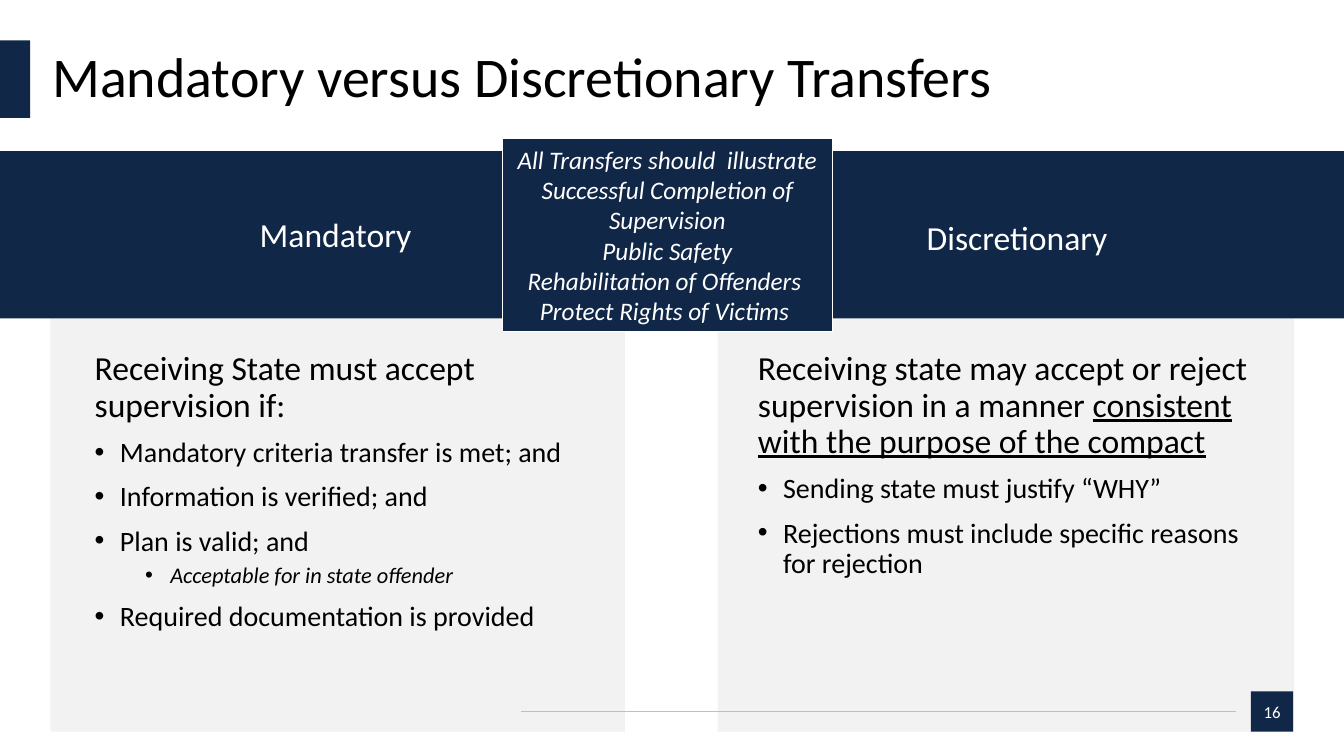
from lxml.etree import SubElement
from pptx import Presentation
from pptx.dml.color import RGBColor
from pptx.enum.shapes import MSO_CONNECTOR as CONNECTOR, MSO_SHAPE as SHAPE
from pptx.enum.text import MSO_ANCHOR as ANCHOR, MSO_AUTO_SIZE as AUTO_SIZE, PP_ALIGN as ALIGN
from pptx.oxml.ns import qn
from pptx.util import Pt

# Content
TITLE = "Mandatory versus Discretionary Transfers"
PAGE = "16"
GOALS = [
    "All Transfers should  illustrate",
    "Successful Completion of Supervision",
    "Public Safety",
    "Rehabilitation of Offenders ",
    "Protect Rights of Victims ",
]
# Each column: panel box, heading box, body box, heading, lines of (level, runs)
# Level 0 is the lead, 1 a bullet, 2 a sub-bullet; a run is (text, underlined)
COLUMNS = [
    ((36, 227.5, 410.4, 295.2), (66.2, 152.6, 347, 28.8), (67.7, 251.3, 367.2, 248.4),
     "Mandatory", [
        (0, [("Receiving State must accept supervision if:", False)]),
        (1, [("Mandatory criteria transfer is met; and", False)]),
        (1, [("Information is verified; and", False)]),
        (1, [("Plan is valid; and", False)]),
        (2, [("Acceptable for in state offender", False)]),
        (1, [("Required documentation is provided", False)]),
    ]),
    ((512.6, 227.5, 411.8, 295.2), (553, 154.8, 347, 25.9), (541.4, 251.3, 367.2, 200.2),
     "Discretionary", [
        (0, [("Receiving state may accept or reject supervision in a manner ", False),
             ("consistent with the purpose of the compact", True)]),
        (1, [("Sending state must justify “WHY”", False)]),
        (1, [("Rejections must include specific reasons for rejection", False)]),
    ]),
]
# Level: text size, space before, left margin
LEVELS = {0: (24, 10, 0), 1: (20, 10, 18), 2: (16, 5, 54)}
HANGING = 18

FONT = "Calibri"
NAVY, WHITE, BLACK, PALE, RULE = "102747", "FFFFFF", "000000", "F2F2F2", "BFBFBF"
WIDTH, HEIGHT = 960, 540


def color(value):
    return RGBColor.from_string(value)


def add_block(box, fill, outline=None):
    block = slide.shapes.add_shape(SHAPE.RECTANGLE, *map(Pt, box))
    block.shadow.inherit = False
    block.fill.solid()
    block.fill.fore_color.rgb = color(fill)
    if outline:
        block.line.color.rgb = color(outline)
        block.line.width = Pt(0.75)
    else:
        block.line.fill.background()
    return block


def clear_margins(frame):
    frame.word_wrap = True
    frame.margin_left = frame.margin_top = frame.margin_right = frame.margin_bottom = 0


def add_frame(box):
    frame = slide.shapes.add_textbox(*map(Pt, box)).text_frame
    clear_margins(frame)
    return frame


def next_paragraph(frame, index):
    return frame.add_paragraph() if index else frame.paragraphs[0]


def add_run(paragraph, text, size, ink, italic=False, underline=False):
    run = paragraph.add_run()
    run.text = text
    font = run.font
    font.name, font.size = FONT, Pt(size)
    font.color.rgb = color(ink)
    font.italic, font.underline = italic, underline


def add_bullet(paragraph, left):
    properties = paragraph._p.get_or_add_pPr()
    properties.set("marL", str(Pt(left)))
    properties.set("indent", str(-Pt(HANGING)))
    SubElement(properties, qn("a:buFont")).set("typeface", "Arial")
    SubElement(properties, qn("a:buChar")).set("char", "•")


def add_centered(frame, lines, size, italic=False):
    for index, text in enumerate(lines):
        paragraph = next_paragraph(frame, index)
        paragraph.alignment = ALIGN.CENTER
        add_run(paragraph, text, size, WHITE, italic)


def add_body(box, lines):
    frame = add_frame(box)
    for index, (level, runs) in enumerate(lines):
        size, before, left = LEVELS[level]
        paragraph = next_paragraph(frame, index)
        paragraph.line_spacing = 0.9
        paragraph.space_before = Pt(before)
        if level:
            add_bullet(paragraph, left)
        for text, underline in runs:
            add_run(paragraph, text, size, BLACK, level == 2, underline)


deck = Presentation()
deck.slide_width, deck.slide_height = Pt(WIDTH), Pt(HEIGHT)
slide = deck.slides.add_slide(deck.slide_layouts[5])

# Title with its side accent
title = slide.shapes.title
title.left, title.top, title.width, title.height = map(Pt, (37.4, 28.8, 886.3, 55.4))
clear_margins(title.text_frame)
title.text_frame.auto_size = AUTO_SIZE.NONE
title.text_frame.vertical_anchor = ANCHOR.MIDDLE
heading = title.text_frame.paragraphs[0]
heading.alignment = ALIGN.LEFT
heading.line_spacing = 0.9
add_run(heading, TITLE, 40, BLACK)
add_block((0, 28.8, 21.6, 55.4), NAVY)

# Panels go behind everything in the columns
for panel, *_ in COLUMNS:
    add_block(panel, PALE)

# Footer rule and page number
rule = slide.shapes.add_connector(CONNECTOR.STRAIGHT, Pt(372.2), Pt(508.3), Pt(882.7), Pt(508.3))
rule.line.color.rgb = color(RULE)
rule.line.width = Pt(0.5)
SubElement(rule._element.spPr, qn("a:effectLst"))
page = add_block((893.5, 493.9, 30.2, 28.8), NAVY).text_frame
page.vertical_anchor = ANCHOR.MIDDLE
add_centered(page, [PAGE], 12)

# Band with the column headings, and the text below
add_block((0, 108, WIDTH, 119.5), NAVY)
for _, heading_box, body_box, name, lines in COLUMNS:
    add_centered(add_frame(heading_box), [name], 24)
    add_body(body_box, lines)

# Shared goals over the middle of the band
goals = add_block((358.6, 98.8, 236.2, 138), NAVY, WHITE).text_frame
goals.word_wrap = True
goals.vertical_anchor = ANCHOR.MIDDLE
add_centered(goals, GOALS, 18, italic=True)

deck.save("out.pptx")
